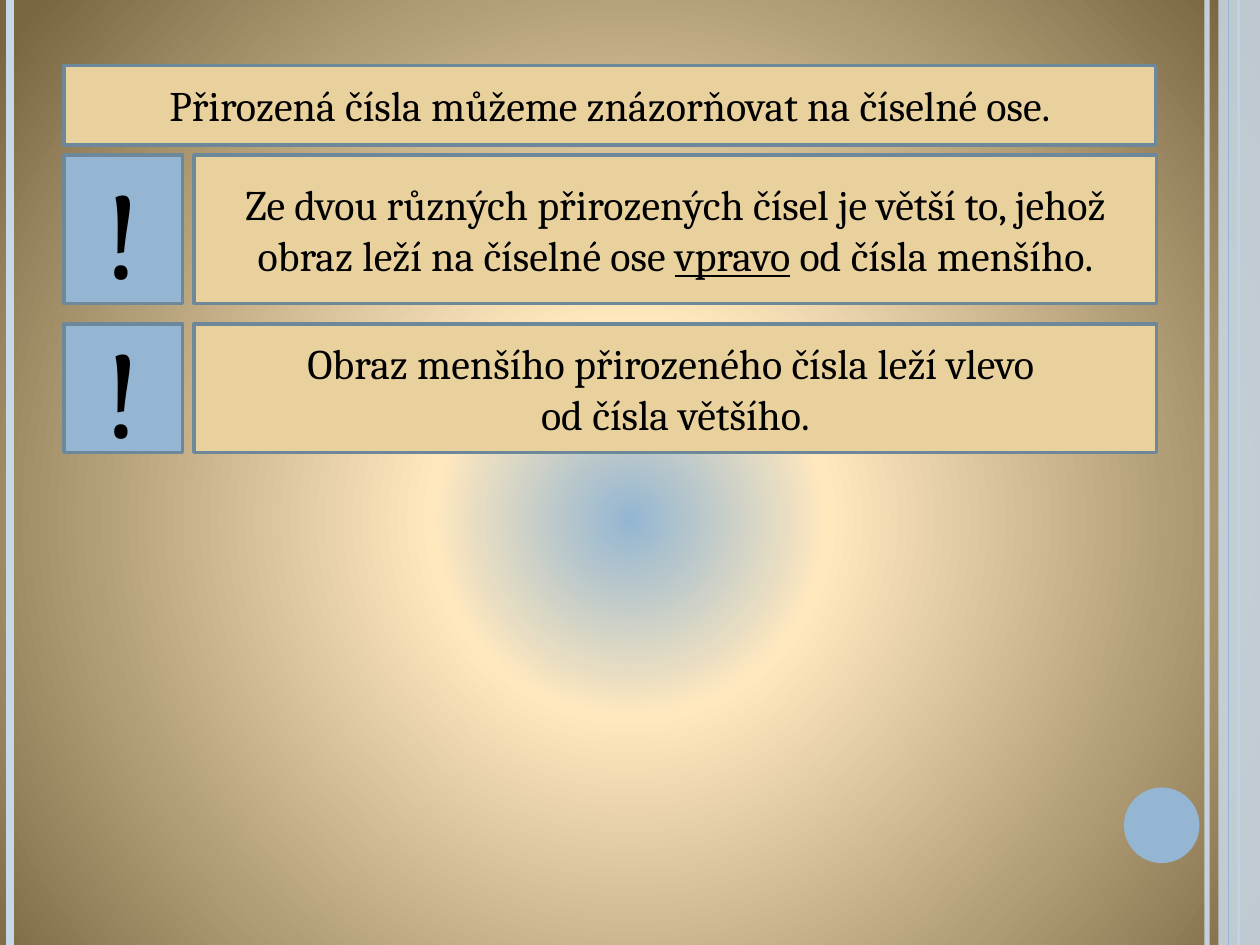
from dataclasses import dataclass

from lxml import etree
from pptx import Presentation
from pptx.dml.color import RGBColor
from pptx.enum.shapes import MSO_CONNECTOR, MSO_SHAPE
from pptx.enum.text import MSO_ANCHOR, PP_ALIGN
from pptx.oxml import parse_xml
from pptx.oxml.ns import nsdecls, qn
from pptx.util import Inches, Pt

RECT, OVAL = MSO_SHAPE.RECTANGLE, MSO_SHAPE.OVAL
STRAIGHT = MSO_CONNECTOR.STRAIGHT
MIDDLE, CENTER = MSO_ANCHOR.MIDDLE, PP_ALIGN.CENTER


@dataclass(frozen=True)
class Theme:
    font: str = "Cambria"
    text: str = "000000"
    sand: str = "E8D19D"
    blue: str = "94B6D2"
    pale: str = "C8D7E5"
    border: str = "6D879B"
    glow: tuple = ((0, "94B6D2"), (25, "FFE8BE"), (100, "7A6742"))
    body_size: int = 24
    mark_size: int = 72
    border_width: int = 2


class SlideBuilder:
    def __init__(self, slide, theme):
        self.s = slide
        self.theme = theme

    def background(self):
        """Radial gradient centred slightly below the middle."""
        self.s.background.fill.gradient()
        old = next(self.s.element.iter(qn("a:gradFill")))
        stops = "".join(
            f'<a:gs pos="{pos * 1000}"><a:srgbClr val="{color}"/></a:gs>'
            for pos, color in self.theme.glow)
        old.getparent().replace(old, parse_xml(
            f'<a:gradFill {nsdecls("a")} rotWithShape="1"><a:gsLst>{stops}</a:gsLst>'
            '<a:path path="circle"><a:fillToRect l="10000" t="110000" r="10000" '
            'b="100000"/></a:path></a:gradFill>'))

    def set_alpha(self, element, percent):
        color = next(element.iter(qn("a:srgbClr")))
        etree.SubElement(color, qn("a:alpha")).set("val", str(percent * 1000))

    def stripe(self, x, color, width, alpha=100):
        """Full-height vertical line."""
        ln = self.s.shapes.add_connector(
            STRAIGHT, Inches(x), Inches(0), Inches(x), Inches(7.5))
        ln.line.color.rgb = RGBColor.from_string(color)
        ln.line.width = Pt(width)
        sp_pr = ln._element.spPr
        if alpha < 100:
            self.set_alpha(sp_pr, alpha)
        etree.SubElement(sp_pr, qn("a:effectLst"))

    def shape(self, kind, x, y, w, h, color, alpha=100):
        """Borderless filled shape."""
        sp = self.s.shapes.add_shape(kind, Inches(x), Inches(y), Inches(w), Inches(h))
        sp.shadow.inherit = False
        sp.fill.solid()
        sp.fill.fore_color.rgb = RGBColor.from_string(color)
        if alpha < 100:
            self.set_alpha(sp._element.spPr, alpha)
        sp.line.fill.background()
        return sp

    def box(self, x, y, w, h, color, paragraphs, size):
        """Bordered text box; each paragraph lists (text, underlined) runs."""
        sp = self.shape(RECT, x, y, w, h, color)
        sp.line.color.rgb = RGBColor.from_string(self.theme.border)
        sp.line.width = Pt(self.theme.border_width)
        tf = sp.text_frame
        tf.word_wrap = True
        tf.vertical_anchor = MIDDLE
        for i, runs in enumerate(paragraphs):
            p = tf.add_paragraph() if i else tf.paragraphs[0]
            p.alignment = CENTER
            for text, underlined in runs:
                r = p.add_run()
                r.text = text
                r.font.name = self.theme.font
                r.font.size = Pt(size)
                r.font.underline = underlined
                r.font.color.rgb = RGBColor.from_string(self.theme.text)

    def rule(self, y, h, paragraphs):
        """Statement with an exclamation mark on its left."""
        t = self.theme
        self.box(1.54, y, 7.64, h, t.sand, paragraphs, t.body_size)
        self.box(0.51, y, 0.94, h, t.blue, [[("!", False)]], t.mark_size)


def main():
    prs = Presentation()
    prs.slide_width, prs.slide_height = Inches(10), Inches(7.5)
    theme = Theme()
    b = SlideBuilder(prs.slides.add_slide(prs.slide_layouts[6]), theme)

    # Background and edge decoration
    b.background()
    b.stripe(9.58, theme.pale, 3, alpha=93)
    b.stripe(0.08, theme.pale, 4.5)
    b.stripe(9.83, theme.blue, 1.5)
    b.shape(RECT, 9.67, 0, 0.33, 7.5, theme.pale, alpha=87)
    b.stripe(9.75, theme.blue, 0.75)
    b.shape(OVAL, 8.92, 6.25, 0.6, 0.6, theme.blue)

    # Heading statement
    b.box(0.51, 0.52, 8.66, 0.63, theme.sand,
          [[("Přirozená čísla můžeme znázorňovat na číselné ose.", False)]],
          theme.body_size)

    # Rules for comparing numbers
    b.rule(1.23, 1.18, [[
        ("Ze dvou různých přirozených čísel je větší to, jehož obraz leží "
         "na číselné ose ", False),
        ("vpravo", True),
        (" od čísla menšího.", False)]])
    b.rule(2.57, 1.02, [
        [("Obraz menšího přirozeného čísla leží vlevo ", False)],
        [("od čísla většího.", False)]])

    prs.save("out.pptx")


if __name__ == "__main__":
    main()
